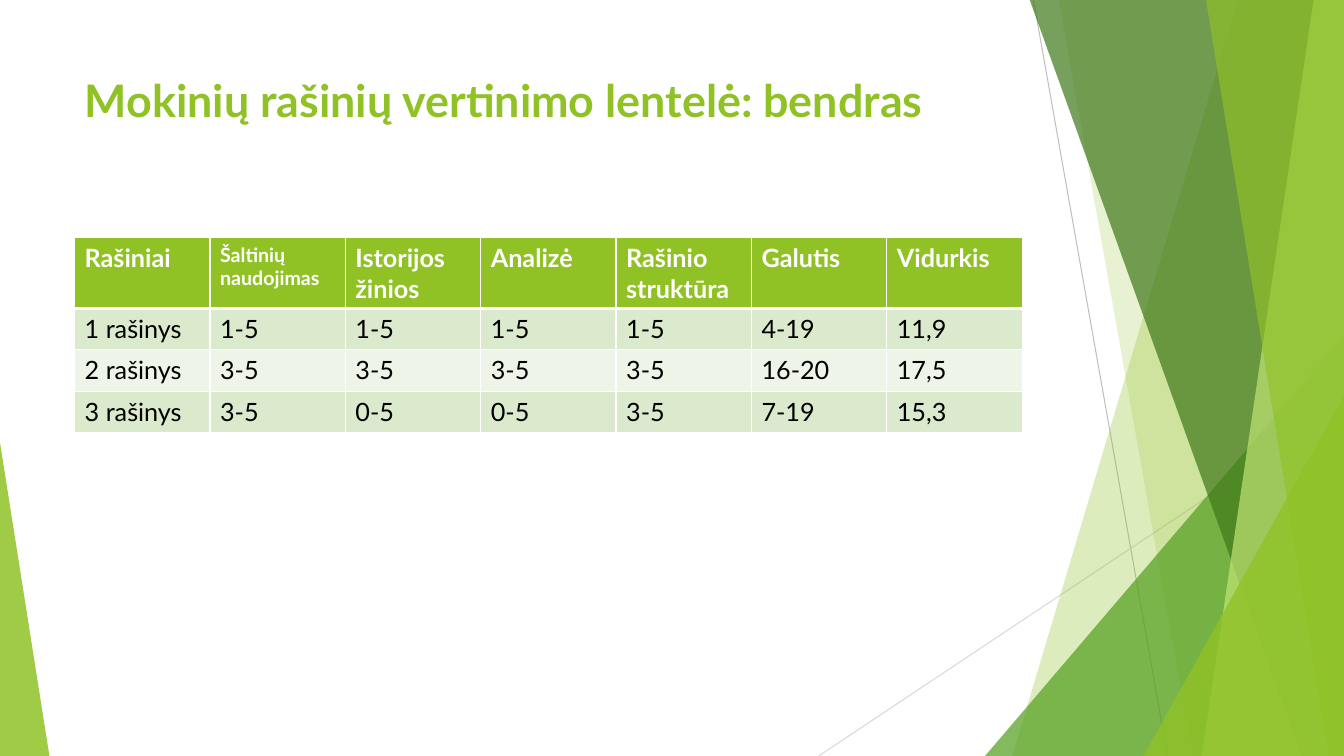
from lxml.etree import SubElement
from pptx import Presentation
from pptx.dml.color import RGBColor
from pptx.enum.shapes import MSO_CONNECTOR, MSO_SHAPE
from pptx.enum.text import MSO_ANCHOR, PP_ALIGN
from pptx.oxml.ns import qn
from pptx.util import Inches, Pt


def color(value):
    return RGBColor.from_string(value)


def paint(shape, value, opacity):
    shape.shadow.inherit = False
    shape.line.fill.background()
    shape.fill.solid()
    shape.fill.fore_color.rgb = color(value)
    tone = shape.fill._xPr.find(".//" + qn("a:srgbClr"))
    SubElement(tone, qn("a:alpha"), val=str(opacity * 1000))


GREEN = "90C226"
TOP, BOTTOM, RIGHT = -0.01, 7.5, 13.33

deck = Presentation()
deck.slide_width, deck.slide_height = Inches(13.33), Inches(7.5)
page = deck.slides.add_slide(deck.slide_layouts[5])

for x1, y1, x2, y2, tone in [
    (10.25, 0, 11.58, 7.5, "BFBFBF"),
    (13.33, 4.03, 8.12, 7.5, "D9D9D9"),
]:
    line = page.shapes.add_connector(
        MSO_CONNECTOR.STRAIGHT, Inches(x1), Inches(y1), Inches(x2), Inches(y2)
    )
    line.line.color.rgb = color(tone)
    line.line.width = Pt(0.75)
    SubElement(line._element.spPr, qn("a:effectLst"))

decorations = [
    ("band", (12.28, 10.04), GREEN, 30),
    ("band", (10.5, 11.83), GREEN, 20),
    ("triangle", (9.77, 3.33, 3.56, 4.17, 1), "54A021", 72),
    ("band", (10.21, 12.91), "3F7819", 70),
    ("band", (13.03, 11.92), "C0E474", 70),
    ("band", (11.96, 13.18), GREEN, 65),
    ("triangle", (11.34, 3.93, 1.99, 3.57, 1), GREEN, 80),
    ("triangle", (0, 4.39, 0.49, 3.11, 0), GREEN, 85),
]
for kind, place, tone, opacity in decorations:
    if kind == "band":
        top_x, bottom_x = place
        outline = page.shapes.build_freeform(Inches(top_x), Inches(TOP))
        corners = [(RIGHT, TOP), (RIGHT, BOTTOM), (bottom_x, BOTTOM)]
        outline.add_line_segments([(Inches(x), Inches(y)) for x, y in corners])
        shape = outline.convert_to_shape()
    else:
        *frame, apex = place
        shape = page.shapes.add_shape(
            MSO_SHAPE.ISOSCELES_TRIANGLE, *[Inches(length) for length in frame]
        )
        shape.adjustments[0] = apex
    paint(shape, tone, opacity)

title = page.shapes.title
title.left, title.top = Inches(0.74), Inches(0.67)
title.width, title.height = Inches(9.4), Inches(1.44)
title.text_frame.text = "Mokinių rašinių vertinimo lentelė: bendras"
title.text_frame.word_wrap = True
title.text_frame.vertical_anchor = MSO_ANCHOR.TOP
para = title.text_frame.paragraphs[0]
para.alignment = PP_ALIGN.LEFT
span = para.runs[0]
span.font.name, span.font.size, span.font.bold = "Lato", Pt(32), True
span.font.color.rgb = color(GREEN)

rows = [
    ["Rašiniai", "Šaltinių naudojimas", "Istorijos žinios", "Analizė",
     "Rašinio struktūra", "Galutis", "Vidurkis"],
    ["1 rašinys", "1-5", "1-5", "1-5", "1-5", "4-19", "11,9"],
    ["2 rašinys", "3-5", "3-5", "3-5", "3-5", "16-20", "17,5"],
    ["3 rašinys", "3-5", "0-5", "0-5", "3-5", "7-19", "15,3"],
]
table = page.shapes.add_table(
    len(rows), len(rows[0]), Inches(0.74), Inches(2.36), Inches(9.4), Inches(1.92)
).table
for r, values in enumerate(rows):
    header = r == 0
    table.rows[r].height = Inches(0.69 if header else 0.41)
    for c, value in enumerate(values):
        cell = table.cell(r, c)
        cell.text_frame.text = value
        font = cell.text_frame.paragraphs[0].runs[0].font
        font.name, font.bold = "Lato", header
        font.size = Pt(14 if header and c == 1 else 18)
        font.color.rgb = color("FFFFFF" if header else "000000")
        properties = cell._tc.get_or_add_tcPr()
        for side in ("L", "R", "T", "B"):
            thick = (r, side) in [(0, "B"), (1, "T")]
            border = SubElement(
                properties, qn(f"a:ln{side}"), w=str(Pt(3 if thick else 1))
            )
            SubElement(SubElement(border, qn("a:solidFill")), qn("a:srgbClr"), val="FFFFFF")
        cell.fill.solid()
        cell.fill.fore_color.rgb = color(
            GREEN if header else "DBE9CD" if r % 2 else "EEF4E8"
        )

deck.save("out.pptx")
